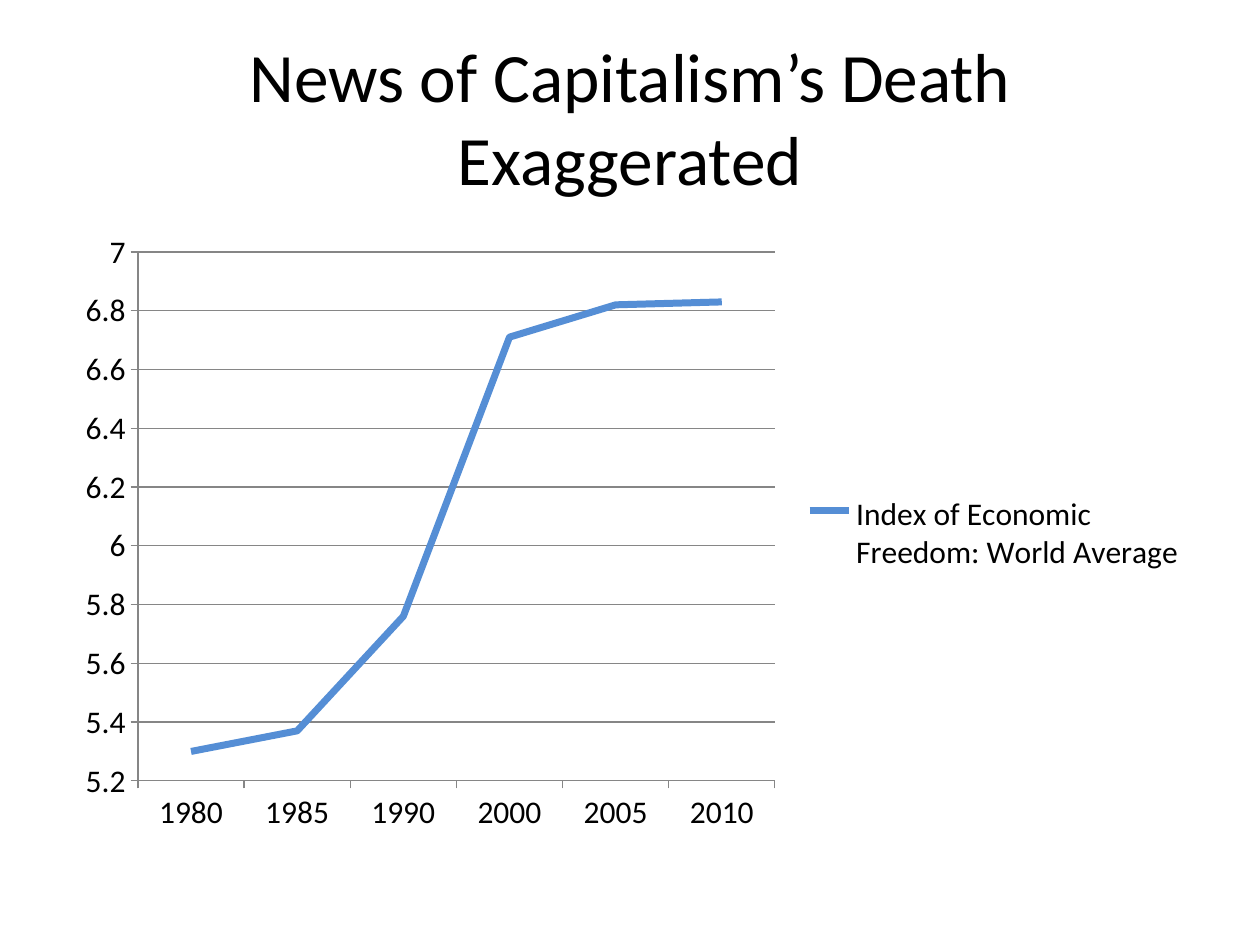
from dataclasses import dataclass

from lxml.etree import SubElement
from pptx import Presentation
from pptx.chart.axis import _BaseAxis as Axis
from pptx.chart.chart import Chart
from pptx.chart.data import CategoryChartData as ChartData
from pptx.dml.color import RGBColor as Color
from pptx.enum.chart import XL_CHART_TYPE as ChartType
from pptx.enum.chart import XL_LEGEND_POSITION as LegendPosition
from pptx.enum.chart import XL_TICK_MARK as TickMark
from pptx.enum.text import MSO_ANCHOR as Anchor
from pptx.enum.text import PP_ALIGN as Align
from pptx.oxml.ns import qn
from pptx.oxml.xmlchemy import BaseOxmlElement as Element
from pptx.slide import Slide
from pptx.util import Emu, Pt

PX_PER_INCH = 126


def px(length: int) -> Emu:
    return Emu(round(length * 914400 / PX_PER_INCH))


@dataclass(frozen=True)
class Theme:
    font: str = "Calibri"
    text: Color = Color(0x00, 0x00, 0x00)
    axis: Color = Color(0x86, 0x86, 0x86)
    series: Color = Color(0x55, 0x8E, 0xD5)
    title_size: Pt = Pt(39.6)
    chart_size: Pt = Pt(18)
    axis_width: Pt = Pt(0.75)
    series_width: Pt = Pt(4)


@dataclass(frozen=True)
class Frame:
    left: int
    top: int
    width: int
    height: int

    def emu(self) -> tuple[Emu, ...]:
        return tuple(map(px, (self.left, self.top, self.width, self.height)))

    def shares_of(self, outer: "Frame") -> dict[str, float]:
        return {
            "x": (self.left - outer.left) / outer.width,
            "y": (self.top - outer.top) / outer.height,
            "w": self.width / outer.width,
            "h": self.height / outer.height,
        }


THEME = Theme()
TITLE_FRAME = Frame(63, 38, 1134, 157)
CHART_FRAME = Frame(63, 221, 1134, 623)
PLOT_FRAME = Frame(138, 252, 637, 529)
LEGEND_FRAME = Frame(800, 490, 388, 86)

TITLE = "News of Capitalism’s Death Exaggerated"
SERIES_NAME = "Index of Economic Freedom: World Average"
FREEDOM_INDEX = {
    "1980": 5.3,
    "1985": 5.37,
    "1990": 5.76,
    "2000": 6.71,
    "2005": 6.82,
    "2010": 6.83,
}


def add_title(page: Slide) -> None:
    box = page.shapes.add_textbox(*TITLE_FRAME.emu())
    box.text_frame.word_wrap = True
    box.text_frame.vertical_anchor = Anchor.MIDDLE
    para = box.text_frame.paragraphs[0]
    para.text = TITLE
    para.alignment = Align.CENTER
    para.font.name = THEME.font
    para.font.size = THEME.title_size
    para.font.color.rgb = THEME.text


def place(parent: Element, index: int, frame: Frame, inner: bool) -> None:
    for old in parent.findall(qn("c:layout")):
        parent.remove(old)
    layout = SubElement(parent, qn("c:layout"))
    parent.insert(index, layout)
    manual = SubElement(layout, qn("c:manualLayout"))
    if inner:
        SubElement(manual, qn("c:layoutTarget")).set("val", "inner")
    for side in "xy":
        SubElement(manual, qn(f"c:{side}Mode")).set("val", "edge")
    for side, share in frame.shares_of(CHART_FRAME).items():
        SubElement(manual, qn(f"c:{side}")).set("val", f"{share:.4f}")


def style_axis(axis: Axis, gridlines: bool) -> None:
    axis.major_tick_mark = TickMark.OUTSIDE
    axis.minor_tick_mark = TickMark.NONE
    axis.has_major_gridlines = gridlines
    lines = [axis.format.line]
    if gridlines:
        lines.append(axis.major_gridlines.format.line)
    for line in lines:
        line.color.rgb = THEME.axis
        line.width = THEME.axis_width


def style_series(chart: Chart) -> None:
    plot = chart.plots[0]
    plot.vary_by_categories = False
    series = plot.series[0]
    series.smooth = False
    series.format.line.color.rgb = THEME.series
    series.format.line.width = THEME.series_width


def add_index_chart(page: Slide) -> None:
    data = ChartData()
    data.categories = list(FREEDOM_INDEX)
    data.add_series(SERIES_NAME, FREEDOM_INDEX.values())
    chart = page.shapes.add_chart(ChartType.LINE, *CHART_FRAME.emu(), data).chart
    chart.has_title = False
    chart.font.name = THEME.font
    chart.font.size = THEME.chart_size
    chart.font.color.rgb = THEME.text

    style_series(chart)
    style_axis(chart.category_axis, gridlines=False)
    style_axis(chart.value_axis, gridlines=True)
    chart.value_axis.minimum_scale = 5.2
    chart.value_axis.maximum_scale = 7
    chart.value_axis.major_unit = 0.2

    chart.has_legend = True
    chart.legend.position = LegendPosition.RIGHT
    chart.legend.include_in_layout = False
    plot_area = chart.element.find(".//" + qn("c:plotArea"))
    legend = chart.element.find(".//" + qn("c:legend"))
    place(plot_area, 0, PLOT_FRAME, inner=True)
    place(legend, 1, LEGEND_FRAME, inner=False)


def main() -> None:
    deck = Presentation()
    deck.slide_width = px(1260)
    deck.slide_height = px(945)
    page = deck.slides.add_slide(deck.slide_layouts[6])
    add_title(page)
    add_index_chart(page)
    deck.save("out.pptx")


if __name__ == "__main__":
    main()
